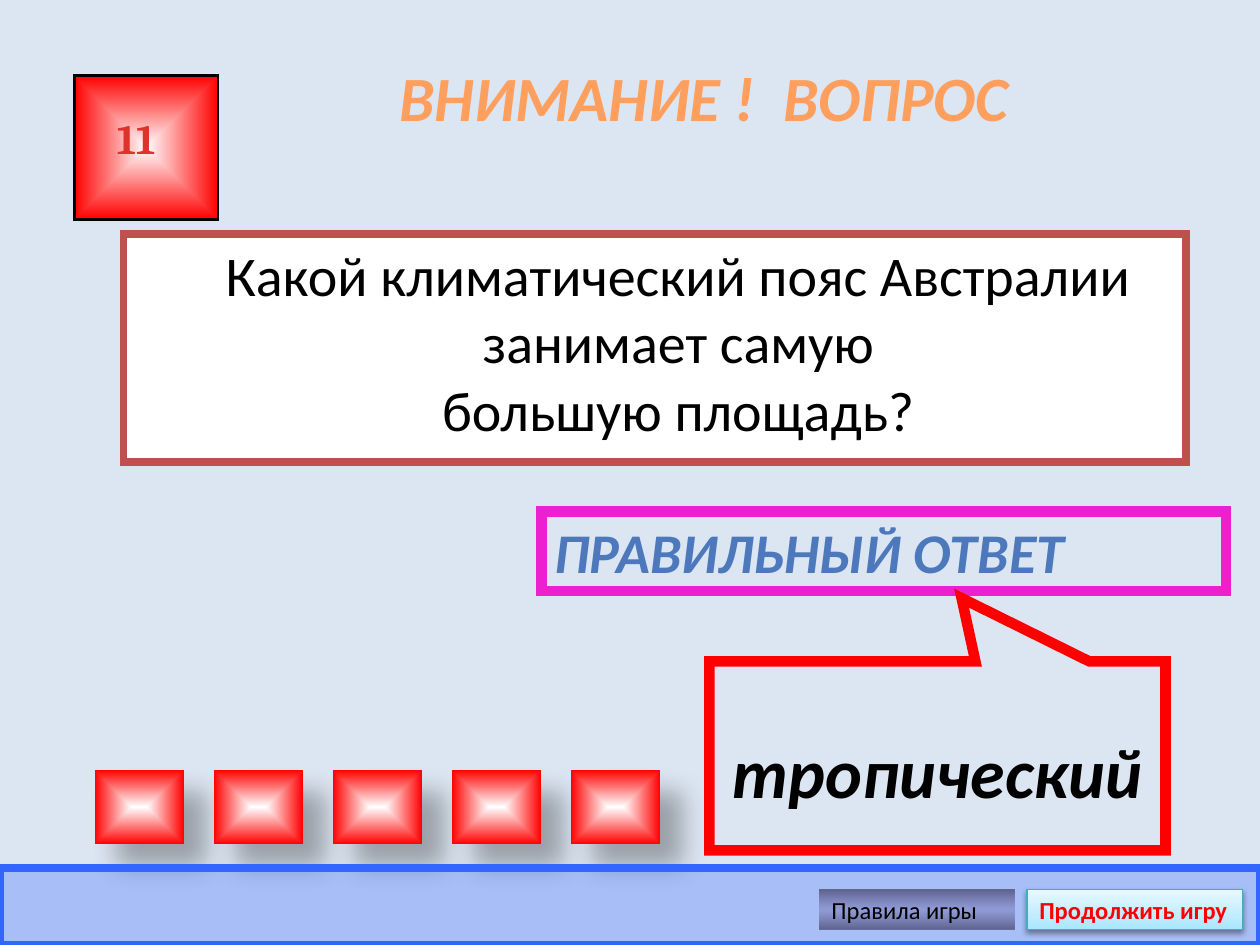
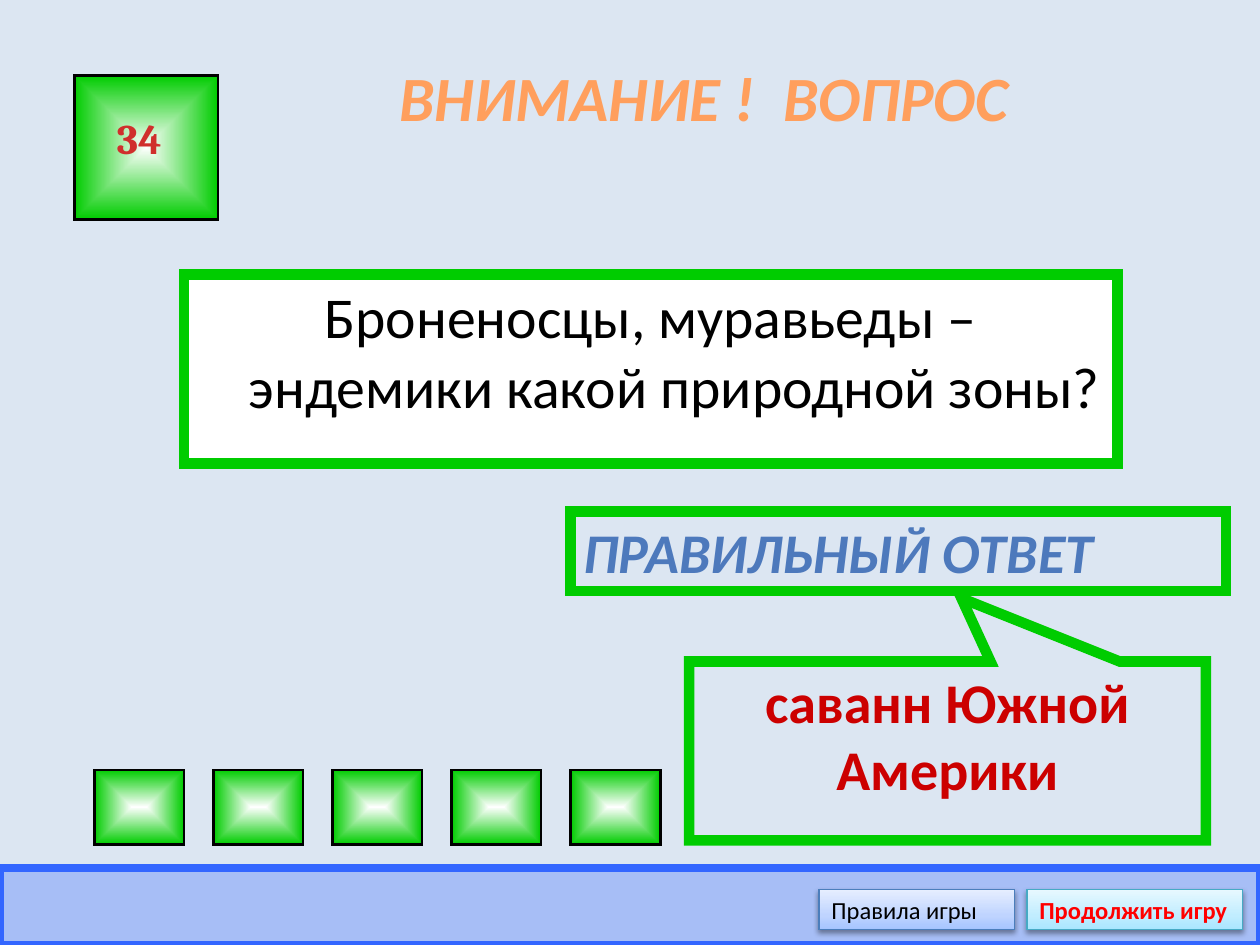
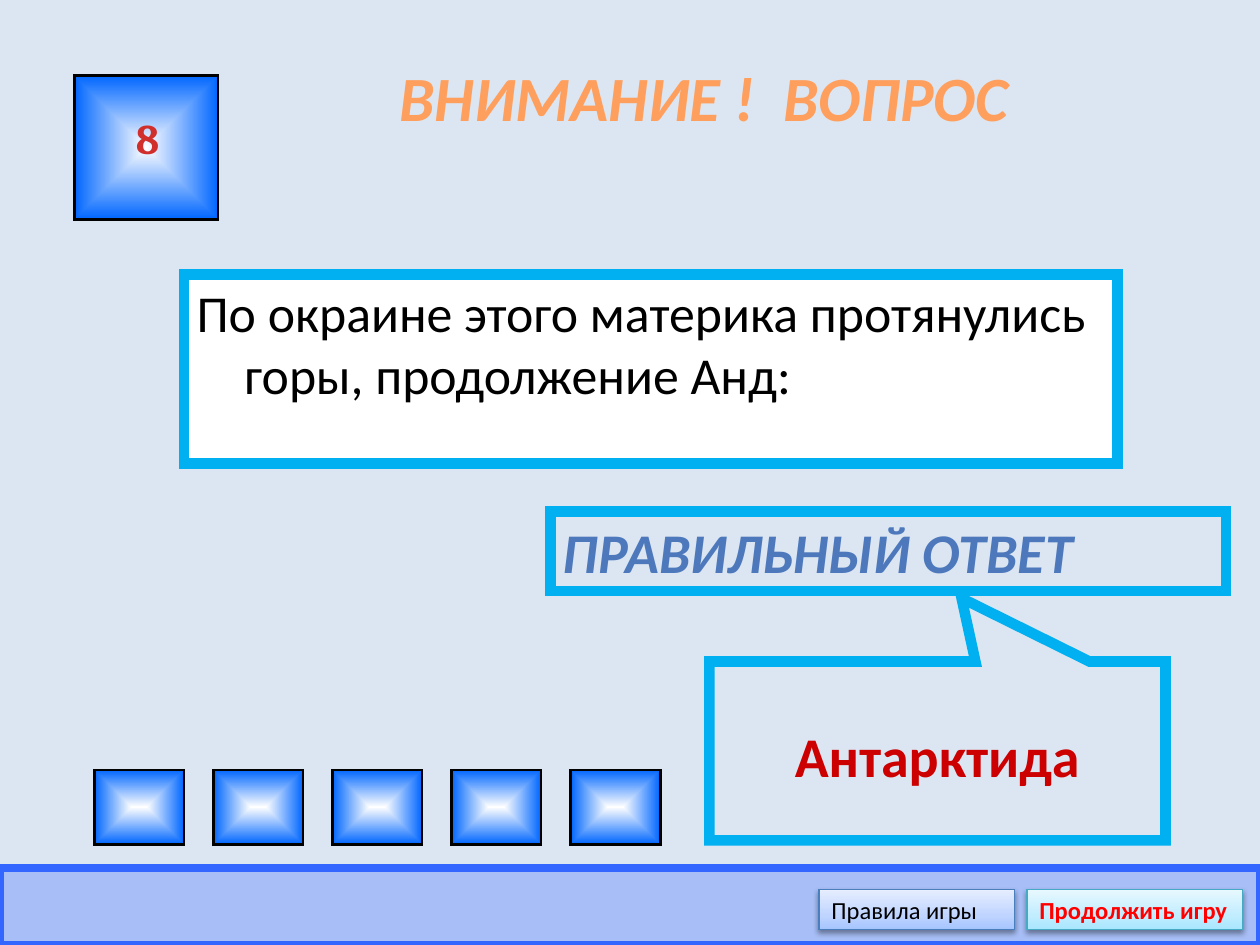
from dataclasses import dataclass
from pptx import Presentation
from pptx.dml.color import RGBColor as Rgb
from pptx.enum.shapes import MSO_SHAPE as Kind
from pptx.enum.text import MSO_ANCHOR as Anchor, MSO_AUTO_SIZE as Auto, PP_ALIGN as Align
from pptx.oxml import parse_xml
from pptx.oxml.ns import nsdecls, qn
from pptx.util import Inches, Pt

HUE = {
    "back": "DCE6F2", "white": "FFFFFF", "black": "000000",
    "title": "FF9F5D", "label": "4D79BC", "band": "3366FF",
    "red": "FF0000", "green": "00CC00", "blue": "0066FF",
    "sky": "00B0F0", "pink": "EC20CF", "brick": "C0504D",
    "digit": "D02F2C", "bright": "E0322D", "reply": "CC0000",
    "rules": "4B7EBC", "next": "46AAC5",
}
DARK = [(0, "5E618C", 100), (50, "8488C4", 63), (100, "5E618C", 100)]
PALE = [(0, "A4C4FF", 100), (35, "BFD4FF", 100), (100, "E6EEFF", 100)]
AQUA = [(0, "A7E6FF", 100), (35, "C1EDFF", 100), (100, "E7F8FF", 100)]
GLOW = (3.1, 1.6, 90, 38)  # blur, distance, angle, opacity
CAST = (15, 18, 45, 30)


@dataclass
class Quiz:
    tile: str
    number: str
    ask: str
    ask_box: tuple
    ask_size: float
    frame: str
    label_left: float
    label_edge: str
    reply: str
    reply_box: tuple
    tip: tuple
    edge: str
    ask_line: float = 6
    ask_align: Align = Align.CENTER
    hang: float = -0.38
    digit: str = "digit"
    digit_left: float = 0.83
    reply_size: float = 32
    reply_hue: str = "reply"
    reply_gap: float = 1
    slant: bool = False
    cast: bool = False


QUIZZES = [
    Quiz("red", "11",
         "Какой климатический пояс Австралии занимает самую\nбольшую площадь?",
         (0.98, 1.86, 8.43, 1.81), 32, "brick", 4.3, "pink",
         "тропический", (5.63, 5.25, 3.62, 1.5), (0.053, -0.835), "red",
         ask_line=4.5, hang=0, digit="bright", reply_size=40,
         reply_hue="black", reply_gap=1.73, slant=True, cast=True),
    Quiz("green", "34",
         "Броненосцы, муравьеды – эндемики какой природной зоны?",
         (1.46, 2.18, 7.41, 1.5), 33, "green", 4.53, "green",
         "саванн Южной Америки", (5.47, 5.25, 4.1, 1.42),
         (0.027, -0.854), "green"),
    Quiz("blue", "8",
         "По окраине этого материка протянулись горы, продолжение Анд:",
         (1.46, 2.18, 7.41, 1.5), 29.6, "sky", 4.37, "sky",
         "Антарктида", (5.63, 5.25, 3.62, 1.42), (0.053, -0.854), "sky",
         ask_align=Align.LEFT, digit_left=0.98, reply_gap=1.8),
]


def color(name):
    return Rgb.from_string(HUE[name])


def place(shape, box):
    shape.left, shape.top, shape.width, shape.height = map(Inches, box)


def paint(shape, fill=None, line=None, width=0):
    """Set a plain fill and a square-cornered outline, or no outline."""
    if fill:
        shape.fill.solid()
        shape.fill.fore_color.rgb = color(fill)
    if line:
        shape.line.color.rgb = color(line)
        shape.line.width = Pt(width)
        shape._element.spPr.find(qn("a:ln")).append(
            parse_xml(f'<a:miter {nsdecls("a")} lim="800000"/>'))
    else:
        shape.line.fill.background()


def blend(shape, stops, angle=None):
    """Fill with a linear gradient, or one from the centre without an angle."""
    marks = "".join(
        f'<a:gs pos="{at * 1000}"><a:srgbClr val="{tone}">'
        f'<a:alpha val="{alpha * 1000}"/></a:srgbClr></a:gs>'
        for at, tone, alpha in stops)
    if angle is None:
        way = ('<a:path path="rect"><a:fillToRect l="50000" t="50000" '
               'r="50000" b="50000"/></a:path>')
    else:
        way = f'<a:lin ang="{angle * 60000}" scaled="0"/>'
    shape.fill.background()
    props = shape._element.spPr
    props.replace(props.find(qn("a:noFill")), parse_xml(
        f'<a:gradFill {nsdecls("a")} rotWithShape="1">'
        f'<a:gsLst>{marks}</a:gsLst>{way}</a:gradFill>'))


def shade(shape, blur, dist, angle, alpha):
    shape._element.spPr.find(qn("a:effectLst")).append(parse_xml(
        f'<a:outerShdw {nsdecls("a")} blurRad="{Pt(blur)}" dist="{Pt(dist)}" '
        f'dir="{angle * 60000}" algn="ctr" rotWithShape="0">'
        f'<a:srgbClr val="{HUE["black"]}"><a:alpha val="{alpha * 1000}"/>'
        '</a:srgbClr></a:outerShdw>'))


def write(shape, text, size, hue, bold=False, italic=False,
          align=Align.LEFT, anchor=Anchor.MIDDLE, face="Calibri"):
    frame = shape.text_frame
    frame.word_wrap = True
    frame.auto_size = Auto.NONE
    frame.vertical_anchor = anchor
    para = frame.paragraphs[0]
    para.text = text
    para.alignment = align
    font = para.font
    font.name, font.size, font.bold, font.italic = face, Pt(size), bold, italic
    font.color.rgb = color(hue)
    return para


def draw(slide, kind, box):
    shape = slide.shapes.add_shape(kind, *map(Inches, box))
    shape.shadow.inherit = False
    return shape


def add_title(slide, box):
    title = slide.shapes.title
    place(title, box)
    write(title, "ВНИМАНИЕ !  ВОПРОС", 36, "title", True, True, Align.CENTER)


def add_ask(slide, quiz):
    body = slide.placeholders[1]
    place(body, quiz.ask_box)
    paint(body, "white", quiz.frame, quiz.ask_line)
    para = write(body, quiz.ask, quiz.ask_size, "black",
                 align=quiz.ask_align, anchor=Anchor.TOP)
    props = para._p.get_or_add_pPr()
    props.set("marL", str(Inches(0.38)))
    props.set("indent", str(Inches(quiz.hang)))
    props.insert_element_before(parse_xml(f'<a:buNone {nsdecls("a")}/>'),
                                "a:tabLst", "a:defRPr", "a:extLst")


def add_tile(slide, box, hue, cast=False):
    tile = draw(slide, Kind.ACTION_BUTTON_CUSTOM, box)
    blend(tile, [(0, HUE["white"], 100), (100, HUE[hue], 100)])
    if cast:
        paint(tile)
        shade(tile, *CAST)
    else:
        paint(tile, line="black", width=1.5)


def add_number(slide, quiz):
    add_tile(slide, (0.59, 0.6, 1.14, 1.14), quiz.tile)
    box = slide.shapes.add_textbox(
        *map(Inches, (quiz.digit_left, 0.84, 0.63, 0.63)))
    write(box, quiz.number, 24, quiz.digit, True,
          anchor=Anchor.TOP, face="Cambria")


def add_row(slide, left, top, quiz):
    for step in range(5):
        add_tile(slide, (left + step * 0.945, top, 0.71, 0.59),
                 quiz.tile, quiz.cast)


def add_reply(slide, quiz):
    left = quiz.label_left
    label = draw(slide, Kind.RECTANGLE, (left, 4.06, 9.73 - left, 0.63))
    paint(label, "back", quiz.label_edge, 6)
    write(label, "ПРАВИЛЬНЫЙ ОТВЕТ", 32, "label", True, True)

    bubble = draw(slide, Kind.RECTANGULAR_CALLOUT, quiz.reply_box)
    bubble.adjustments[0], bubble.adjustments[1] = quiz.tip
    paint(bubble, "back", quiz.edge, 6)
    para = write(bubble, quiz.reply, quiz.reply_size, quiz.reply_hue, True,
                 quiz.slant, Align.CENTER, Anchor.TOP)
    para.line_spacing = quiz.reply_gap


def add_button(slide, box, text, stops, angle, edge, hue, bold=False):
    button = draw(slide, Kind.RECTANGLE, box)
    blend(button, stops, angle)
    paint(button, line=edge, width=0.75)
    if edge:
        shade(button, *GLOW)
    write(button, text, 14, hue, bold)
    button.text_frame.margin_right = 0


def add_foot(slide, top, dark):
    band = draw(slide, Kind.RECTANGLE, (0, top, 10, 0.61))
    paint(band, "band", "band", 4.5)
    tone = band._element.spPr.find(qn("a:solidFill"))[0]
    tone.append(parse_xml(f'<a:alpha {nsdecls("a")} val="31000"/>'))
    look = (DARK, 90, None) if dark else (PALE, 270, "rules")
    add_button(slide, (6.5, top + 0.17, 1.55, 0.32), "Правила игры",
               *look, "black")
    add_button(slide, (8.15, top + 0.17, 1.71, 0.32), "Продолжить игру",
               AQUA, 270, "next", "red", True)


def add_quiz(deck, quiz):
    slide = deck.slides.add_slide(deck.slide_layouts[1])
    slide.background.fill.solid()
    slide.background.fill.fore_color.rgb = color("back")
    add_title(slide, (2.4, 0.3, 6.38, 0.93))
    add_ask(slide, quiz)
    add_number(slide, quiz)
    add_row(slide, 0.75, 6.11, quiz)
    add_reply(slide, quiz)
    add_foot(slide, 6.89, quiz.cast)


def main():
    deck = Presentation()
    deck.slide_width, deck.slide_height = Inches(10), Inches(7.5)
    for quiz in QUIZZES:
        add_quiz(deck, quiz)
    deck.save("out.pptx")


if __name__ == "__main__":
    main()
